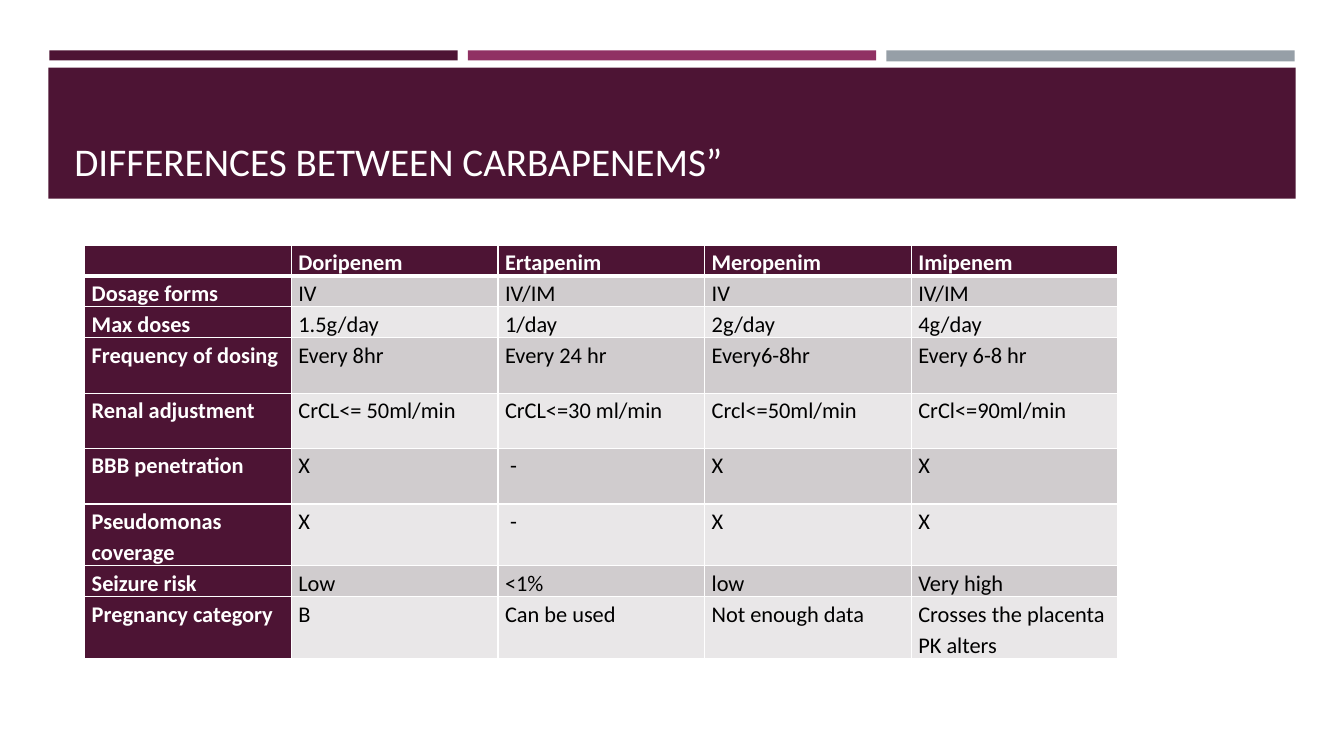
import dataclasses

import lxml.etree
import pptx
import pptx.dml.color
import pptx.enum.shapes
import pptx.enum.text
import pptx.oxml.ns
import pptx.util

Inches = pptx.util.Inches
Pt = pptx.util.Pt

FONT = "Calibri"
PLUM = "4D1434"
MAGENTA = "903163"
SLATE = "969FA7"
WHITE = "FFFFFF"
BLACK = "000000"
BANDS = ("D0CCCE", "E9E7E8")

COLUMN_WIDTH = 2.05
ROW_HEIGHTS = (0.27, 0.27, 0.27, 0.55, 0.55, 0.55, 0.55, 0.27, 0.55)
ROWS = (
    ("", "Doripenem", "Ertapenim", "Meropenim", "Imipenem"),
    ("Dosage forms", "IV", "IV/IM", "IV", "IV/IM"),
    ("Max doses", "1.5g/day", "1/day", "2g/day", "4g/day"),
    ("Frequency of dosing", "Every 8hr", "Every 24 hr", "Every6-8hr", "Every 6-8 hr"),
    ("Renal adjustment", "CrCL<= 50ml/min", "CrCL<=30 ml/min", "Crcl<=50ml/min", "CrCl<=90ml/min"),
    ("BBB penetration", "X", " -", "X", "X"),
    ("Pseudomonas coverage", "X", " -", "X", "X"),
    ("Seizure risk", "Low", "<1%", "low", "Very high"),
    ("Pregnancy category", "B", "Can be used", "Not enough data", "Crosses the placenta PK alters"),
)


@dataclasses.dataclass(frozen=True)
class Bar:
    left: float
    top: float
    width: float
    height: float
    color: str


BARS = (
    Bar(0.49, 0.5, 4.05, 0.1, PLUM),
    Bar(4.64, 0.5, 4.05, 0.1, MAGENTA),
    Bar(8.79, 0.5, 4.05, 0.11, SLATE),
    Bar(0.48, 0.67, 12.37, 1.3, PLUM),
)


def rgb(color: str) -> pptx.dml.color.RGBColor:
    return pptx.dml.color.RGBColor.from_string(color)


def draw_bar(slide: pptx.slide.Slide, bar: Bar) -> None:
    shape = slide.shapes.add_shape(
        pptx.enum.shapes.MSO_SHAPE.RECTANGLE,
        Inches(bar.left), Inches(bar.top), Inches(bar.width), Inches(bar.height),
    )
    shape.shadow.inherit = False
    shape.fill.solid()
    shape.fill.fore_color.rgb = rgb(bar.color)
    shape.line.fill.background()


def add_run(paragraph, text: str, size: float, color: str, bold: bool = False) -> None:
    run = paragraph.add_run()
    run.text = text
    run.font.name = FONT
    run.font.size = Pt(size)
    run.font.bold = bold
    run.font.color.rgb = rgb(color)


def draw_title(slide: pptx.slide.Slide, text: str) -> None:
    shape = slide.shapes.add_textbox(Inches(0.64), Inches(0.77), Inches(12.06), Inches(1.11))
    frame = shape.text_frame
    frame.word_wrap = True
    frame.vertical_anchor = pptx.enum.text.MSO_ANCHOR.BOTTOM
    add_run(frame.paragraphs[0], text, 28, WHITE)


def add_border(cell, side: str, width: float) -> None:
    properties = cell._tc.get_or_add_tcPr()
    qn = pptx.oxml.ns.qn
    line = lxml.etree.SubElement(properties, qn(f"a:ln{side}"), w=str(Pt(width)))
    fill = lxml.etree.SubElement(line, qn("a:solidFill"))
    lxml.etree.SubElement(fill, qn("a:srgbClr"), val=WHITE)


def format_cell(cell, text: str, row: int, column: int) -> None:
    heading = row == 0 or column == 0
    cell.margin_left = cell.margin_right = Inches(0.07)
    cell.margin_top = cell.margin_bottom = 0
    add_border(cell, "L", 1)
    add_border(cell, "R", 1)
    add_border(cell, "T", 3 if row == 1 else 1)
    add_border(cell, "B", 3 if row == 0 else 1)
    cell.fill.solid()
    cell.fill.fore_color.rgb = rgb(PLUM if heading else BANDS[(row - 1) % 2])
    if text:
        paragraph = cell.text_frame.paragraphs[0]
        paragraph.line_spacing = 1.15
        add_run(paragraph, text, 16, WHITE if heading else BLACK, heading)


def draw_table(slide: pptx.slide.Slide) -> None:
    frame = slide.shapes.add_table(
        len(ROWS), len(ROWS[0]), Inches(0.84), Inches(2.43),
        Inches(COLUMN_WIDTH * len(ROWS[0])), Inches(sum(ROW_HEIGHTS)),
    )
    table = frame.table
    for column in table.columns:
        column.width = Inches(COLUMN_WIDTH)
    for row, (height, texts) in enumerate(zip(ROW_HEIGHTS, ROWS)):
        table.rows[row].height = Inches(height)
        for column, text in enumerate(texts):
            format_cell(table.cell(row, column), text, row, column)


def main() -> None:
    presentation = pptx.Presentation()
    presentation.slide_width = Inches(13.33)
    presentation.slide_height = Inches(7.5)
    slide = presentation.slides.add_slide(presentation.slide_layouts[6])
    for bar in BARS:
        draw_bar(slide, bar)
    draw_title(slide, "DIFFERENCES BETWEEN CARBAPENEMS”")
    draw_table(slide)
    presentation.save("out.pptx")


if __name__ == "__main__":
    main()
